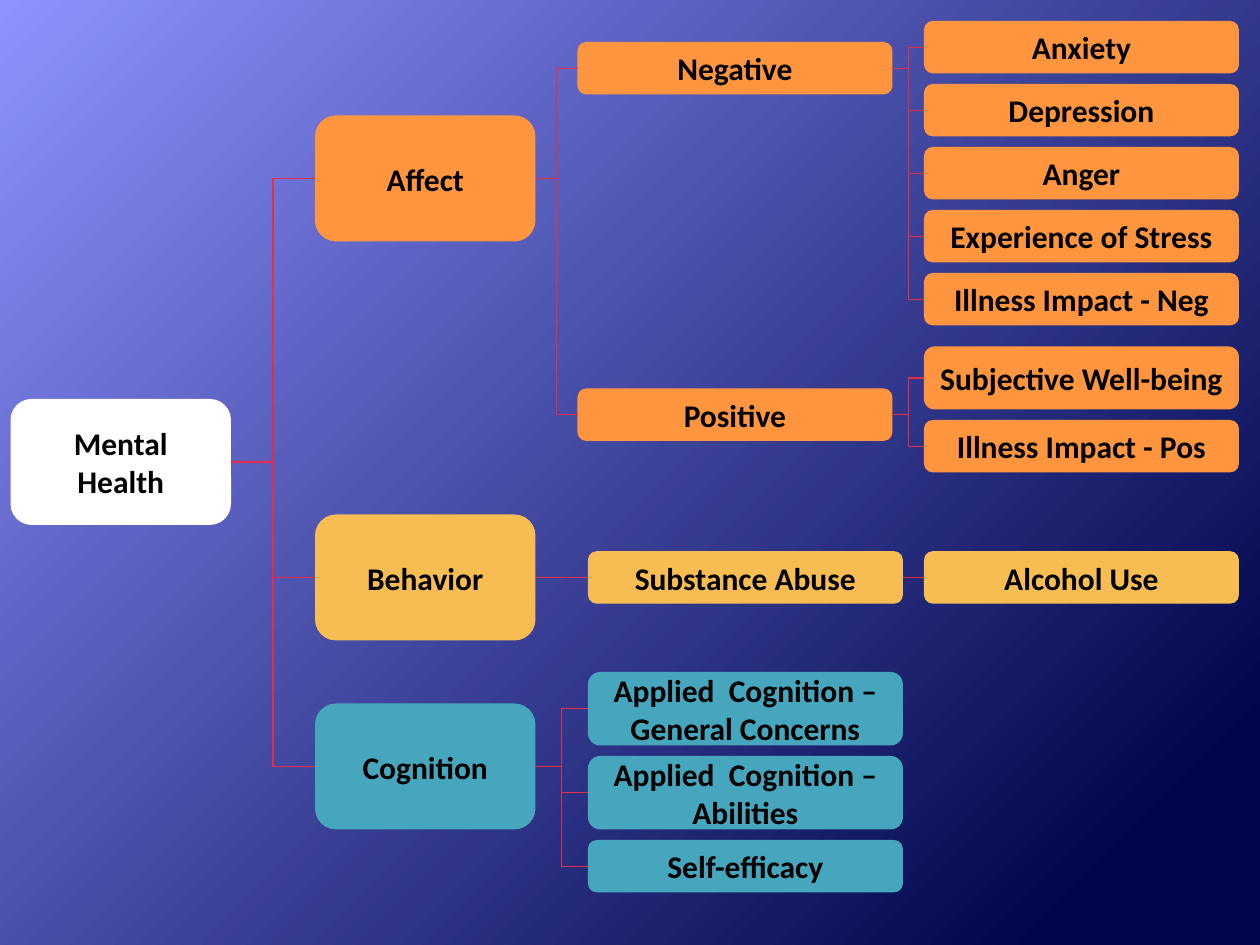
from dataclasses import dataclass

from lxml.etree import SubElement
from pptx import Presentation
from pptx.dml.color import RGBColor as Rgb
from pptx.enum.shapes import MSO_CONNECTOR as Connector, MSO_SHAPE as Preset
from pptx.enum.text import MSO_ANCHOR as Anchor, PP_ALIGN as Align
from pptx.oxml.ns import qn
from pptx.util import Cm, Pt


@dataclass(frozen=True)
class Theme:
    font: str = "Calibri"
    label_size: int = 18
    line_width: float = 0.75
    text: str = "000000"
    line: str = "E72C43"
    root: str = "FFFFFF"
    affect: str = "FF953E"
    behavior: str = "F8BD52"
    cognition: str = "46A6BD"
    sky: str = "8D92FF"
    night: str = "00064B"


@dataclass(frozen=True)
class Box:
    left: float
    top: float
    width: float
    height: float

    def inner(self, left, top, width, height):
        return Box(self.left + left, self.top + top, width, height)


THEME = Theme()
COLUMNS, ROWS = 120, 90
DOMAIN_WIDTH, DOMAIN_HEIGHT = 21, 12
ITEM_WIDTH, ITEM_HEIGHT, ITEM_GAP = 30, 5, 1
FACET_LEFT, MEASURE_LEFT = 26, 58
LEFT_SITE, RIGHT_SITE = 1, 3


def grid(steps):
    return Cm(steps * 2.54 / 12)


def write(shape, text, *, size=THEME.label_size, color=THEME.text, bold=True):
    frame = shape.text_frame
    frame.word_wrap = True
    frame.vertical_anchor = Anchor.MIDDLE
    paragraph = frame.paragraphs[0]
    paragraph.alignment = Align.CENTER
    run = paragraph.add_run()
    run.text = text
    run.font.name = THEME.font
    run.font.size = Pt(size)
    run.font.bold = bold
    run.font.color.rgb = Rgb.from_string(color)


def connect(slide, parent, child):
    link = slide.shapes.add_connector(Connector.ELBOW, 0, 0, 0, 0)
    link.begin_connect(parent, RIGHT_SITE)
    link.end_connect(child, LEFT_SITE)
    link.line.color.rgb = Rgb.from_string(THEME.line)
    link.line.width = Pt(THEME.line_width)
    SubElement(link._element.spPr, qn("a:effectLst"))


def add_node(slide, box, label, fill, parent=None):
    node = slide.shapes.add_shape(
        Preset.ROUNDED_RECTANGLE,
        grid(box.left), grid(box.top), grid(box.width), grid(box.height),
    )
    node.shadow.inherit = False
    node.fill.solid()
    node.fill.fore_color.rgb = Rgb.from_string(fill)
    node.line.fill.background()
    write(node, label)
    if parent is not None:
        connect(slide, parent, node)
    return node


def add_domain(slide, region, top, label, fill, root):
    box = region.inner(0, top, DOMAIN_WIDTH, DOMAIN_HEIGHT)
    return add_node(slide, box, label, fill, root)


def add_item(slide, region, left, top, label, fill, parent, height=ITEM_HEIGHT):
    box = region.inner(left, top, ITEM_WIDTH, height)
    return add_node(slide, box, label, fill, parent)


def add_stack(slide, region, left, top, items, fill, parent):
    for label, height in items:
        add_item(slide, region, left, top, label, fill, parent, height)
        top += height + ITEM_GAP


def add_affect(slide, region, root):
    fill = THEME.affect
    affect = add_domain(slide, region, 9, "Affect", fill, root)
    facets = [
        ("Negative", 2, 0, [
            ("Anxiety", ITEM_HEIGHT),
            ("Depression", ITEM_HEIGHT),
            ("Anger", ITEM_HEIGHT),
            ("Experience of Stress", ITEM_HEIGHT),
            ("Illness Impact - Neg", ITEM_HEIGHT),
        ]),
        ("Positive", 35, 31, [
            ("Subjective Well-being", 6),
            ("Illness Impact - Pos", ITEM_HEIGHT),
        ]),
    ]
    for label, facet_top, measures_top, measures in facets:
        facet = add_item(slide, region, FACET_LEFT - 1, facet_top, label, fill, affect)
        add_stack(slide, region, MEASURE_LEFT, measures_top, measures, fill, facet)


def add_behavior(slide, region, root):
    fill = THEME.behavior
    behavior = add_domain(slide, region, 0, "Behavior", fill, root)
    top = (region.height - ITEM_HEIGHT) / 2
    abuse = add_item(slide, region, FACET_LEFT, top, "Substance Abuse", fill, behavior)
    add_item(slide, region, MEASURE_LEFT, top, "Alcohol Use", fill, abuse)


def add_cognition(slide, region, root):
    fill = THEME.cognition
    cognition = add_domain(slide, region, 3, "Cognition", fill, root)
    facets = [
        ("Applied  Cognition – General Concerns", 7),
        ("Applied  Cognition – Abilities", 7),
        ("Self-efficacy", ITEM_HEIGHT),
    ]
    add_stack(slide, region, FACET_LEFT, 0, facets, fill, cognition)


def paint_background(slide):
    fill = slide.background.fill
    fill.gradient()
    fill.gradient_angle = 315
    stops = ((0, THEME.sky), (0.9, THEME.night))
    for stop, (position, color) in zip(fill.gradient_stops, stops):
        stop.position = position
        stop.color.rgb = Rgb.from_string(color)


def main():
    deck = Presentation()
    deck.slide_width, deck.slide_height = grid(COLUMNS), grid(ROWS)
    slide = deck.slides.add_slide(deck.slide_layouts[6])
    paint_background(slide)
    root_box = Box(1, 38, DOMAIN_WIDTH, DOMAIN_HEIGHT)
    root = add_node(slide, root_box, "Mental Health", THEME.root)
    add_affect(slide, Box(30, 2, 88, 43), root)
    add_behavior(slide, Box(30, 49, 88, 12), root)
    add_cognition(slide, Box(30, 64, 56, 21), root)
    deck.save("out.pptx")


if __name__ == "__main__":
    main()
